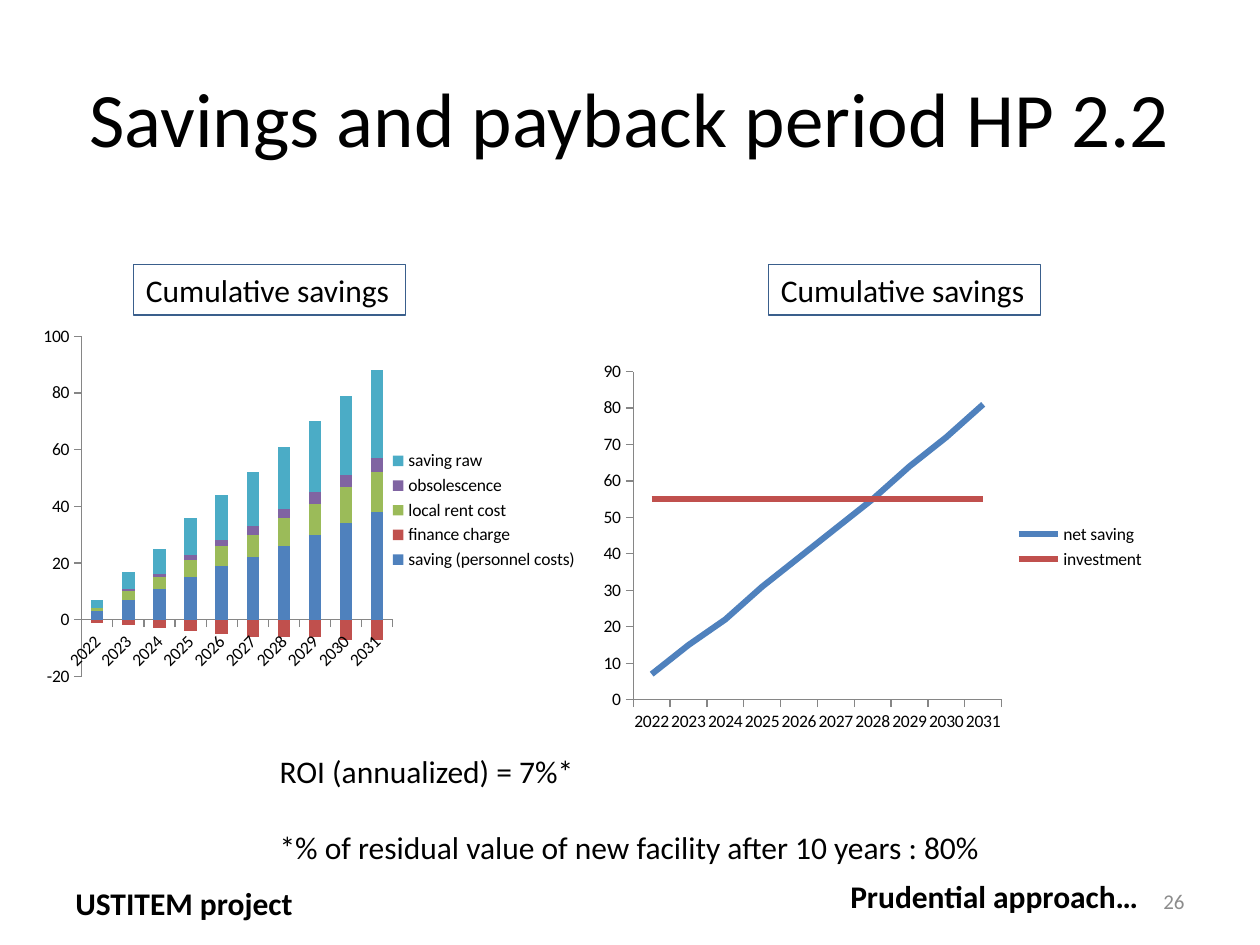
from pptx import Presentation
from pptx.chart.data import CategoryChartData
from pptx.dml.color import RGBColor
from pptx.enum.chart import XL_CHART_TYPE, XL_LEGEND_POSITION, XL_TICK_MARK
from pptx.enum.shapes import MSO_SHAPE
from pptx.enum.text import MSO_ANCHOR, PP_ALIGN
from pptx.oxml import parse_xml
from pptx.oxml.ns import nsdecls
from pptx.util import Inches, Pt

FONT = "Calibri"
COLORS = {
    "text": "000000", "page": "8C8C8C", "frame": "3A5F8C", "axis": "868686",
    "blue": "4F81BD", "red": "C0504D", "green": "9BBB59",
    "purple": "8064A2", "teal": "4BACC6",
}
YEARS = [str(year) for year in range(2022, 2032)]
COSTS = [
    ("saving (personnel costs)", "blue", [3, 7, 11, 15, 19, 22, 26, 30, 34, 38]),
    ("finance charge", "red", [-1, -2, -3, -4, -5, -6, -6, -6, -7, -7]),
    ("local rent cost", "green", [1, 3, 4, 6, 7, 8, 10, 11, 13, 14]),
    ("obsolescence", "purple", [0, 1, 1, 2, 2, 3, 3, 4, 4, 5]),
    ("saving raw", "teal", [3, 6, 9, 13, 16, 19, 22, 25, 28, 31]),
]
PAYBACK = [
    ("net saving", "blue", [7, 15, 22, 31, 39, 47, 55, 64, 72, 81]),
    ("investment", "red", [55] * len(YEARS)),
]


def color(name):
    return RGBColor.from_string(COLORS[name])


def style(font, size, name="text", bold=False):
    font.name = FONT
    font.size = Pt(size)
    font.bold = bold
    font.color.rgb = color(name)


def add_title(slide, box, text):
    title = slide.shapes.title
    title.left, title.top, title.width, title.height = map(Inches, box)
    frame = title.text_frame
    frame.text = text
    frame.vertical_anchor = MSO_ANCHOR.MIDDLE
    para = frame.paragraphs[0]
    para.alignment = PP_ALIGN.CENTER
    style(para.font, 44)


def add_text(slide, box, lines, size=18, name="text", bold=False, gap=0):
    frame = slide.shapes.add_textbox(*map(Inches, box)).text_frame
    frame.word_wrap = False
    frame.text = "\n".join(lines)
    for spot, para in enumerate(frame.paragraphs):
        style(para.font, size, name, bold)
        if spot:
            para.space_before = Pt(gap)
    return frame


def add_label(slide, box, text):
    label = slide.shapes.add_shape(MSO_SHAPE.RECTANGLE, *map(Inches, box))
    label.shadow.inherit = False
    label.fill.background()
    label.line.color.rgb = color("frame")
    label.line.width = Pt(0.75)
    frame = label.text_frame
    frame.word_wrap = False
    frame.text = text
    para = frame.paragraphs[0]
    para.alignment = PP_ALIGN.LEFT
    style(para.font, 18)


def add_chart(slide, box, kind, rows, low, high, step):
    data = CategoryChartData()
    data.categories = YEARS
    for title, _, values in rows:
        data.add_series(title, values)
    chart = slide.shapes.add_chart(kind, *map(Inches, box), data).chart
    style(chart.font, 10)
    chart.has_title = False
    chart.has_legend = True
    chart.legend.position = XL_LEGEND_POSITION.RIGHT
    chart.legend.include_in_layout = False
    for axis in (chart.category_axis, chart.value_axis):
        axis.has_major_gridlines = False
        axis.major_tick_mark = XL_TICK_MARK.OUTSIDE
        axis.minor_tick_mark = XL_TICK_MARK.NONE
        axis.format.line.color.rgb = color("axis")
        axis.format.line.width = Pt(0.75)
    scale = chart.value_axis
    scale.minimum_scale, scale.maximum_scale = low, high
    scale.major_unit = step
    chart.plots[0].vary_by_categories = False
    return chart


def add_bars(slide, box):
    chart = add_chart(slide, box, XL_CHART_TYPE.COLUMN_STACKED, COSTS, -20, 100, 20)
    plot = chart.plots[0]
    plot.gap_width, plot.overlap = 150, 100
    for series, (_, name, _) in zip(plot.series, COSTS):
        series.invert_if_negative = False
        series.format.fill.solid()
        series.format.fill.fore_color.rgb = color(name)
    area = chart.element.chart.plotArea
    for old in area.findall("{*}layout"):
        area.remove(old)
    sizes = {"x": 0.1, "y": 0.04, "w": 0.55, "h": 0.9}
    parts = "".join(f'<c:{key} val="{size}"/>' for key, size in sizes.items())
    area.insert(0, parse_xml(
        f'<c:layout {nsdecls("c")}><c:manualLayout><c:layoutTarget val="inner"/>'
        f'<c:xMode val="edge"/><c:yMode val="edge"/>{parts}'
        '</c:manualLayout></c:layout>'))


def add_lines(slide, box):
    chart = add_chart(slide, box, XL_CHART_TYPE.LINE, PAYBACK, 0, 90, 10)
    for series, (_, name, _) in zip(chart.plots[0].series, PAYBACK):
        series.smooth = False
        series.format.line.color.rgb = color(name)
        series.format.line.width = Pt(3.5)


def add_foot(slide, box):
    left, top, width, height = box
    add_text(slide, (left, top + 0.06, 2, height), ["USTITEM project"], bold=True)
    add_text(slide, (left + 6.15, top, 2.53, height), ["Prudential approach…"], bold=True)
    page = add_text(slide, (left + width - 2.33, top + 0.04, 2.33, height),
                    ["26"], 12, "page")
    page.word_wrap = True
    page.vertical_anchor = MSO_ANCHOR.MIDDLE
    page.paragraphs[0].alignment = PP_ALIGN.RIGHT


def main():
    deck = Presentation()
    deck.slide_width, deck.slide_height = Inches(10), Inches(7.5)
    slide = deck.slides.add_slide(deck.slide_layouts[5])
    add_title(slide, (0.5, 0.3, 9, 1.25), "Savings and payback period HP 2.2")
    for left in (1.06, 6.1):
        add_label(slide, (left, 2.1, 2.16, 0.4), "Cumulative savings")
    add_text(slide, (2.12, 5.92, 5.89, 1.01),
             ["ROI (annualized) = 7%*",
              "*% of residual value of new facility after 10 years : 80%"], gap=22)
    add_foot(slide, (0.5, 6.91, 9, 0.4))
    add_lines(slide, (4.7, 2.81, 4.49, 3.06))
    add_bars(slide, (0.2, 2.55, 4.49, 3))
    deck.save("out.pptx")


if __name__ == "__main__":
    main()
